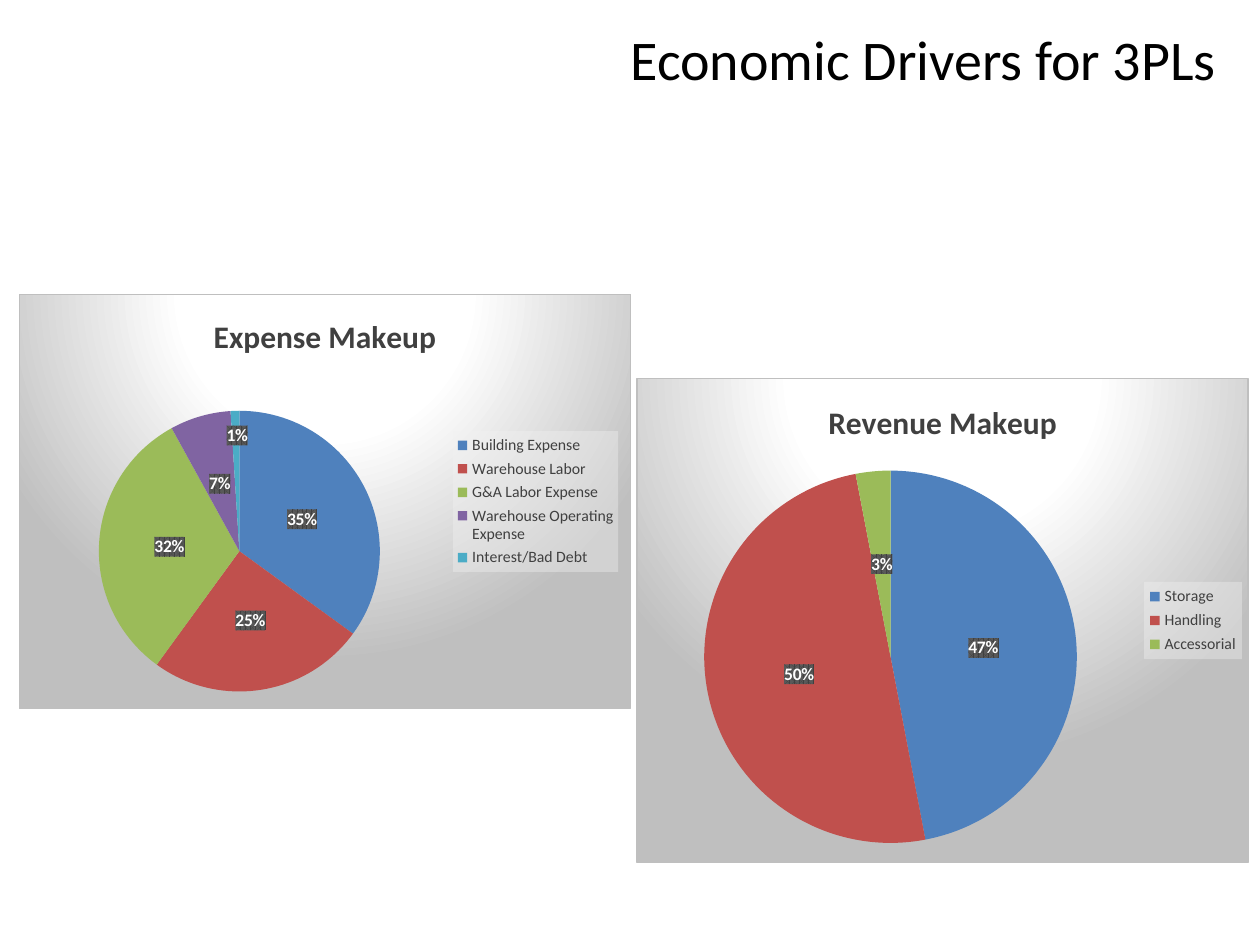
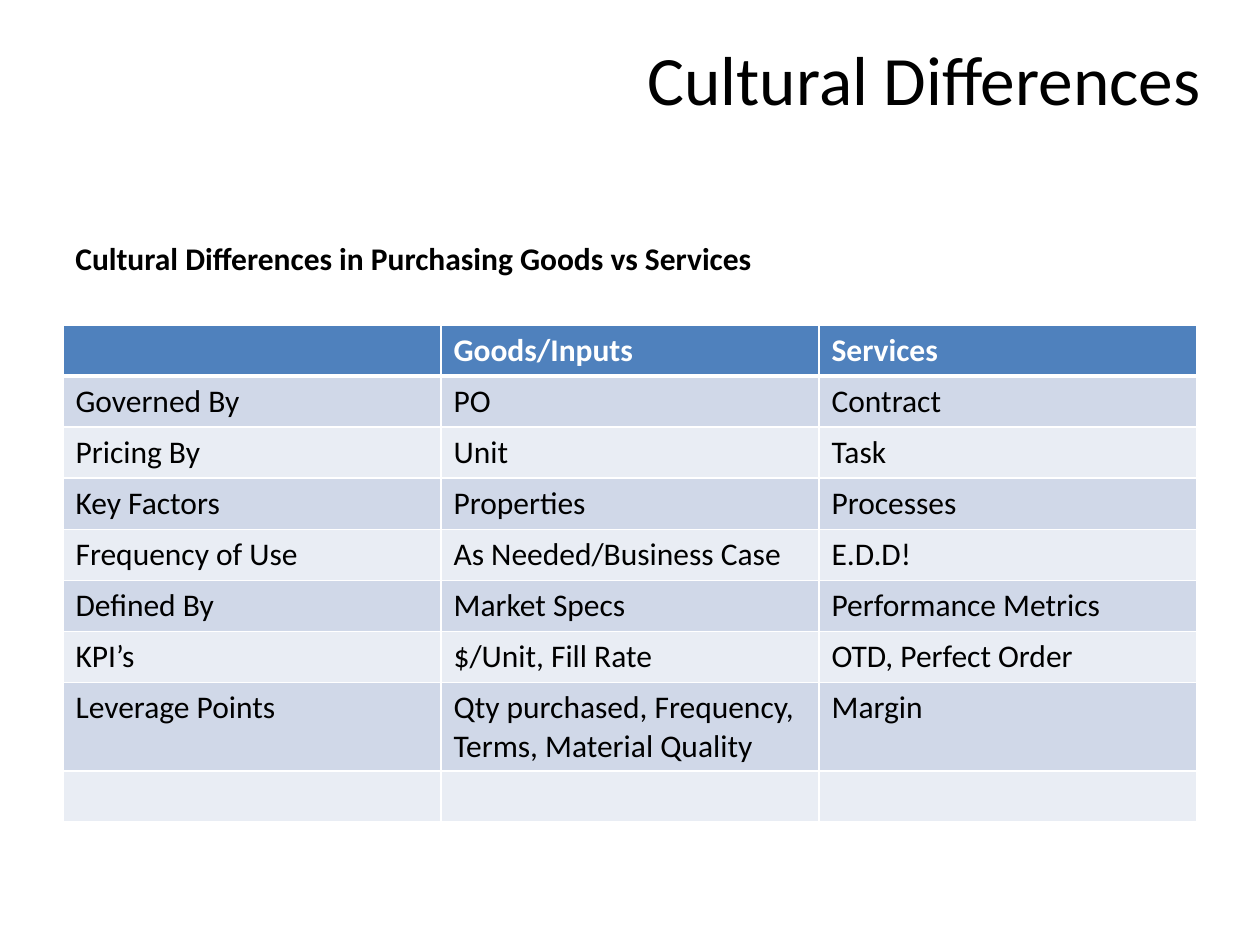
"""Build two slides: 3PL expense and revenue pies, and a goods versus services table."""
from copy import deepcopy

from pptx import Presentation
from pptx.chart.data import CategoryChartData
from pptx.dml.color import RGBColor
from pptx.enum.chart import XL_CHART_TYPE, XL_LABEL_POSITION, XL_LEGEND_POSITION
from pptx.enum.text import MSO_ANCHOR, PP_ALIGN
from pptx.oxml import parse_xml
from pptx.oxml.ns import nsdecls, qn
from pptx.util import Cm, Pt

PIE = XL_CHART_TYPE.PIE
LABEL_CENTER = XL_LABEL_POSITION.CENTER
LEGEND_RIGHT = XL_LEGEND_POSITION.RIGHT
MIDDLE = MSO_ANCHOR.MIDDLE
LEFT, CENTER, RIGHT = PP_ALIGN.LEFT, PP_ALIGN.CENTER, PP_ALIGN.RIGHT

FONT = "Calibri"
COLORS = {
    "text": "000000", "white": "FFFFFF", "gray": "404040",
    "header": "4F81BD", "band_dark": "D0D8E8", "band_light": "E9EDF4",
}
SLICES = ["4F81BD", "C0504D", "9BBB59", "8064A2", "4BACC6"]
NS = nsdecls("c", "a")

PANEL = f"""<c:spPr {NS}><a:gradFill><a:gsLst>
<a:gs pos="0"><a:srgbClr val="FFFFFF"/></a:gs>
<a:gs pos="39000"><a:srgbClr val="FFFFFF"/></a:gs>
<a:gs pos="100000"><a:srgbClr val="BFBFBF"/></a:gs></a:gsLst>
<a:path path="circle"><a:fillToRect l="50000" t="-80000" r="50000" b="180000"/></a:path>
</a:gradFill><a:ln w="9525"><a:solidFill><a:srgbClr val="BFBFBF"/></a:solidFill></a:ln></c:spPr>"""
LEGEND_BOX = f"""<c:spPr {NS}><a:solidFill><a:srgbClr val="F2F2F2">
<a:alpha val="39000"/></a:srgbClr></a:solidFill></c:spPr>"""
LABEL_BOX = f"""<c:spPr {NS}><a:pattFill prst="pct75">
<a:fgClr><a:srgbClr val="404040"/></a:fgClr>
<a:bgClr><a:srgbClr val="595959"/></a:bgClr></a:pattFill></c:spPr>"""


def write(tf, text, size=18, color="text", bold=False, align=LEFT):
    p = tf.paragraphs[0]
    p.alignment = align
    r = p.add_run()
    r.text = text
    r.font.name, r.font.size, r.font.bold = FONT, Pt(size), bold
    r.font.color.rgb = RGBColor.from_string(COLORS[color])


def layout_xml(x, y, w, h, target=""):
    return parse_xml(
        f'<c:layout {NS}><c:manualLayout>{target}'
        '<c:xMode val="edge"/><c:yMode val="edge"/>'
        f'<c:x val="{x}"/><c:y val="{y}"/><c:w val="{w}"/><c:h val="{h}"/>'
        '</c:manualLayout></c:layout>')


prs = Presentation()
prs.slide_width, prs.slide_height = Cm(25.4), Cm(19.05)

titles = [
    ("Economic Drivers for 3PLs", 32, RIGHT, (11.23, 0.15, 13.54, 2.03)),
    ("Cultural Differences", 39.6, CENTER, (12.7, 0.08, 11.86, 2.97)),
]
slides = []
for text, size, align, box in titles:
    s = prs.slides.add_slide(prs.slide_layouts[6])
    tf = s.shapes.add_textbox(*map(Cm, box)).text_frame
    tf.word_wrap = True
    tf.vertical_anchor = MIDDLE
    write(tf, text, size=size, align=align)
    slides.append(s)
drivers, culture = slides

pies = [
    ("Expense Makeup", (0.38, 5.92, 12.34, 8.38),
     {"Building Expense": 35, "Warehouse Labor": 25, "G&A Labor Expense": 32,
      "Warehouse Operating Expense": 7, "Interest/Bad Debt": 1},
     (0.13, 0.28, 0.46, 0.68), (0.71, 0.33, 0.27, 0.34)),
    ("Revenue Makeup", (12.83, 7.62, 12.34, 9.78),
     {"Storage": 47, "Handling": 50, "Accessorial": 3},
     (0.11, 0.19, 0.61, 0.77), (0.83, 0.42, 0.16, 0.16)),
]
for name, box, shares, plot_box, legend_box in pies:
    data = CategoryChartData()
    data.categories = list(shares)
    data.add_series(name, list(shares.values()))
    chart = drivers.shapes.add_chart(PIE, *map(Cm, box), data).chart
    chart.font.name, chart.font.size = FONT, Pt(10)
    chart.font.color.rgb = RGBColor.from_string(COLORS["text"])
    chart.has_title = True
    write(chart.chart_title.text_frame, name, color="gray", bold=True, align=CENTER)
    chart.chart_title.include_in_layout = False

    chart.has_legend = True
    legend = chart.legend
    legend.position = LEGEND_RIGHT
    legend.include_in_layout = False
    legend.font.name, legend.font.size = FONT, Pt(9)
    legend.font.color.rgb = RGBColor.from_string(COLORS["gray"])

    plot = chart.plots[0]
    plot.vary_by_categories = True
    series = plot.series[0]
    for i in range(len(shares)):
        fill = series.points[i].format.fill
        fill.solid()
        fill.fore_color.rgb = RGBColor.from_string(SLICES[i])

    labels = series.data_labels
    labels.show_percentage, labels.show_value = True, False
    labels.number_format, labels.number_format_is_linked = "0%", False
    labels.position = LABEL_CENTER
    labels.font.name, labels.font.size, labels.font.bold = FONT, Pt(10), True
    labels.font.color.rgb = RGBColor.from_string(COLORS["white"])

    root = chart._chartSpace
    area, key = root.find(".//" + qn("c:plotArea")), root.find(".//" + qn("c:legend"))
    for parent in (area, key):
        for old in parent.findall(qn("c:layout")):
            parent.remove(old)
    area.insert(0, layout_xml(*plot_box, target='<c:layoutTarget val="inner"/>'))
    key.find(qn("c:legendPos")).addnext(layout_xml(*legend_box))
    key.find(qn("c:txPr")).addprevious(parse_xml(LEGEND_BOX))
    root.find(qn("c:chart")).addnext(parse_xml(PANEL))
    dlbls = root.find(".//" + qn("c:ser")).find(qn("c:dLbls"))
    dlbls.find(qn("c:txPr")).addprevious(parse_xml(LABEL_BOX))

    if "Interest/Bad Debt" in shares:
        raised = parse_xml(
            f'<c:dLbl {NS}><c:idx val="{len(shares) - 1}"/><c:layout><c:manualLayout>'
            '<c:x val="0"/><c:y val="-0.11"/></c:manualLayout></c:layout></c:dLbl>')
        for child in dlbls:
            if child.tag != qn("c:showLeaderLines"):
                raised.append(deepcopy(child))
        dlbls.insert(0, raised)

rows = [
    ("", "Goods/Inputs", "Services"),
    ("Governed By", "PO", "Contract"),
    ("Pricing By", "Unit", "Task"),
    ("Key Factors", "Properties", "Processes"),
    ("Frequency of Use", "As Needed/Business Case", "E.D.D!"),
    ("Defined By", "Market Specs", "Performance Metrics"),
    ("KPI’s", "$/Unit, Fill Rate", "OTD, Perfect Order"),
    ("Leverage Points", "Qty purchased, Frequency, Terms, Material Quality", "Margin"),
    ("", "", ""),
]
row_height = 1.03
table = culture.shapes.add_table(
    len(rows), 3, Cm(1.27), Cm(6.55), Cm(22.86), Cm(row_height * len(rows))).table
table.horz_banding = False
for i, row in enumerate(rows):
    band = "header" if i == 0 else "band_dark" if i % 2 else "band_light"
    widths = {"L": 1, "R": 1, "T": 3 if i == 1 else 1, "B": 3 if i == 0 else 1}
    for j, text in enumerate(row):
        cell = table.cell(i, j)
        cell.fill.solid()
        cell.fill.fore_color.rgb = RGBColor.from_string(COLORS[band])
        if text:
            write(cell.text_frame, text, color="text" if i else "white", bold=i == 0)
        tcPr = cell._tc.get_or_add_tcPr()
        for k, (side, width) in enumerate(widths.items()):
            tcPr.insert(k, parse_xml(
                f'<a:ln{side} {NS} w="{Pt(width)}"><a:solidFill>'
                f'<a:srgbClr val="{COLORS["white"]}"/></a:solidFill></a:ln{side}>'))

tf = culture.shapes.add_textbox(Cm(1.27), Cm(4.7), Cm(14.27), Cm(1.02)).text_frame
tf.word_wrap = False
write(tf, "Cultural Differences in Purchasing Goods vs Services", bold=True)

prs.save("out.pptx")
